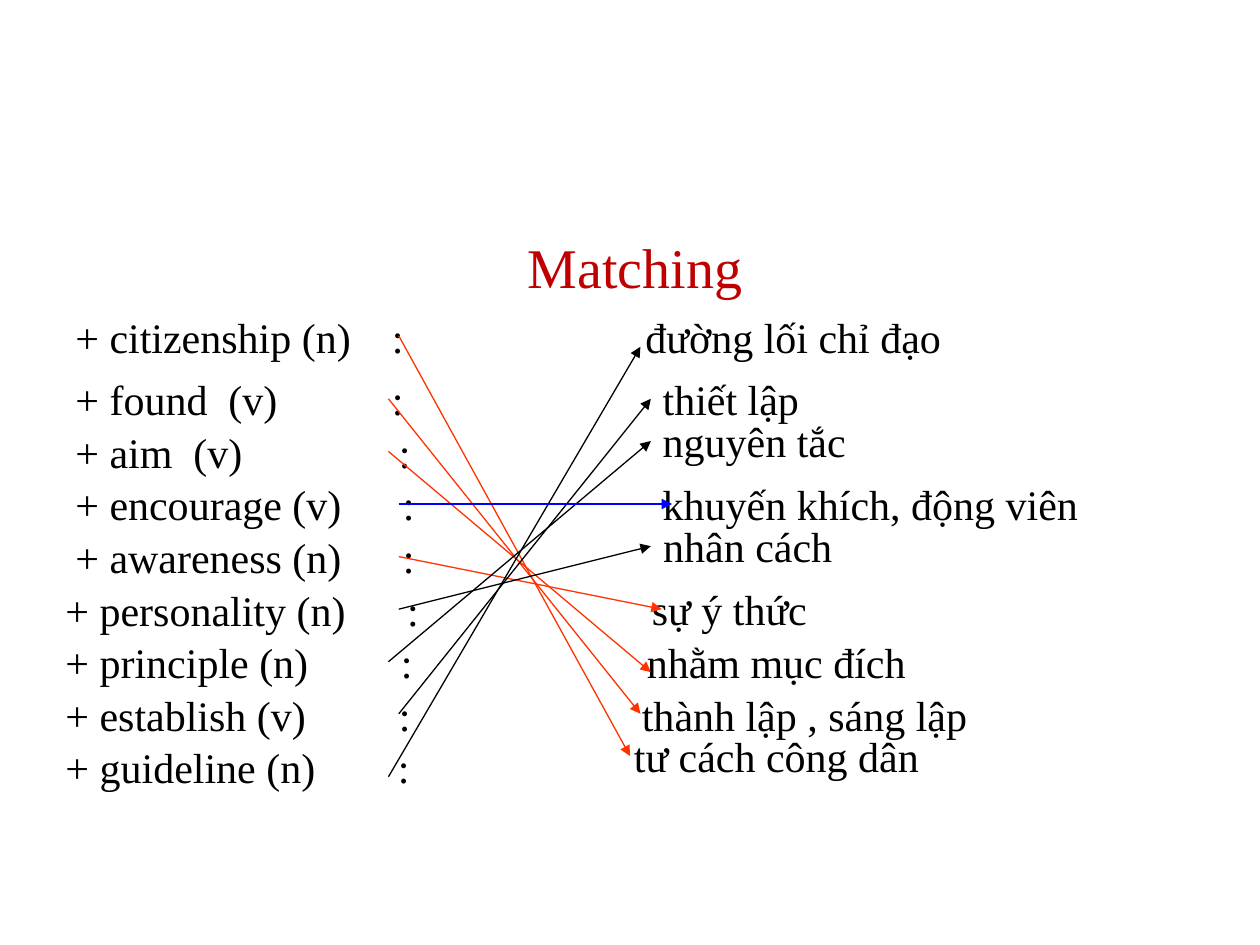
from pptx import Presentation
from pptx.util import Cm, Pt
from pptx.dml.color import RGBColor
from pptx.enum.shapes import MSO_CONNECTOR as MC
from pptx.enum.text import MSO_ANCHOR as MA, MSO_AUTO_SIZE as MAS, PP_ALIGN as PA
from pptx.oxml.ns import qn
from lxml.etree import SubElement

FONT = "Times New Roman"
INSET = 0.25


def style(r, size, color):
    r.font.name = FONT
    r.font.size = Pt(size)
    r.font.color.rgb = RGBColor.from_string(color)


def add_text(text, left, top, width):
    sp = s.shapes.add_textbox(Cm(left), Cm(top), Cm(width), Cm(1.27))
    tf = sp.text_frame
    tf.word_wrap = True
    tf.auto_size = MAS.SHAPE_TO_FIT_TEXT
    p = tf.paragraphs[0]
    r = p.add_run()
    r.text = text
    style(r, 24, "000000")
    return p


prs = Presentation()
prs.slide_width, prs.slide_height = Cm(25.4), Cm(19.05)
s = prs.slides.add_slide(prs.slide_layouts[5])

# Title
sp = s.shapes.title
sp.left, sp.top, sp.width, sp.height = Cm(1.37), Cm(4.55), Cm(22.86), Cm(12.57)
tf = sp.text_frame
tf.vertical_anchor = MA.TOP
tf.auto_size = MAS.NONE
p = tf.paragraphs[0]
p.alignment = PA.CENTER
r = p.add_run()
r.text = "Matching"
style(r, 32, "C00000")

# English words: text, left, width, position of the colon
words = [
    ("+ citizenship (n)", 1.27, 7.82, 7.9),
    ("+ found  (v)", 1.27, 7.42, 7.9),
    ("+ aim  (v)", 1.27, 7.42, 8.04),
    ("+ encourage (v)", 1.27, 8.05, 8.12),
    ("+ awareness (n)", 1.27, 8.26, 8.12),
    ("+ personality (n)", 1.07, 8.69, 8.21),
    ("+ principle (n)", 1.07, 8.23, 8.08),
    ("+ establish (v)", 1.07, 8.26, 8.04),
    ("+ guideline (n)", 1.07, 7.59, 8.02),
]
for i, (word, left, width, colon) in enumerate(words):
    top = 6.15 if i == 0 else 7.41 + 1.06 * (i - 1)
    p = add_text(word + "\t:", left, top, width)
    tabs = SubElement(p._p.get_or_add_pPr(), qn("a:tabLst"))
    SubElement(tabs, qn("a:tab"), pos=str(Cm(colon - left - INSET)), algn="l")

# Vietnamese meanings: text, left, top, width, indent
meanings = [
    ("đường lối chỉ đạo", 8.31, 6.15, 13.72, 4.45),
    ("thiết lập", 9.09, 7.41, 11.23, 4.02),
    ("nguyên tắc", 9.09, 8.26, 10.59, 4.02),
    ("khuyến khích, động viên", 9.53, 9.53, 13.54, 3.58),
    ("nhân cách", 9.32, 10.36, 12.27, 3.8),
    ("sự ý thức", 9.09, 11.63, 11.63, 3.8),
    ("nhằm mục đích", 9.83, 12.7, 12.8, 2.96),
    ("thành lập , sáng lập", 8.46, 13.77, 13.13, 4.23),
    ("tư cách công dân", 8.26, 14.6, 13.97, 4.27),
]
for meaning, left, top, width, indent in meanings:
    p = add_text(meaning, left, top, width)
    p._p.get_or_add_pPr().set("marL", str(Cm(indent)))

# Arrows from each word to its meaning
arrows = [
    (8.04, 6.77, 12.7, 15.24, "FF3300"),
    (7.83, 8.04, 12.91, 14.39, "FF3300"),
    (7.83, 9.1, 13.12, 13.55, "FF3300"),
    (8.04, 11.22, 13.34, 12.28, "FF3300"),
    (8.04, 12.28, 13.12, 11.01, "000000"),
    (7.83, 13.34, 13.12, 8.89, "000000"),
    (8.04, 14.39, 13.12, 8.04, "000000"),
    (7.83, 15.66, 12.91, 6.99, "000000"),
    (8.04, 10.16, 13.55, 10.16, "0000FF"),
]
for x1, y1, x2, y2, color in arrows:
    c = s.shapes.add_connector(MC.STRAIGHT, Cm(x1), Cm(y1), Cm(x2), Cm(y2))
    c.line.color.rgb = RGBColor.from_string(color)
    c.line.width = Pt(0.75)
    SubElement(c.line._get_or_add_ln(), qn("a:tailEnd"), type="triangle")
    SubElement(c._element.spPr, qn("a:effectLst"))

prs.save("out.pptx")
